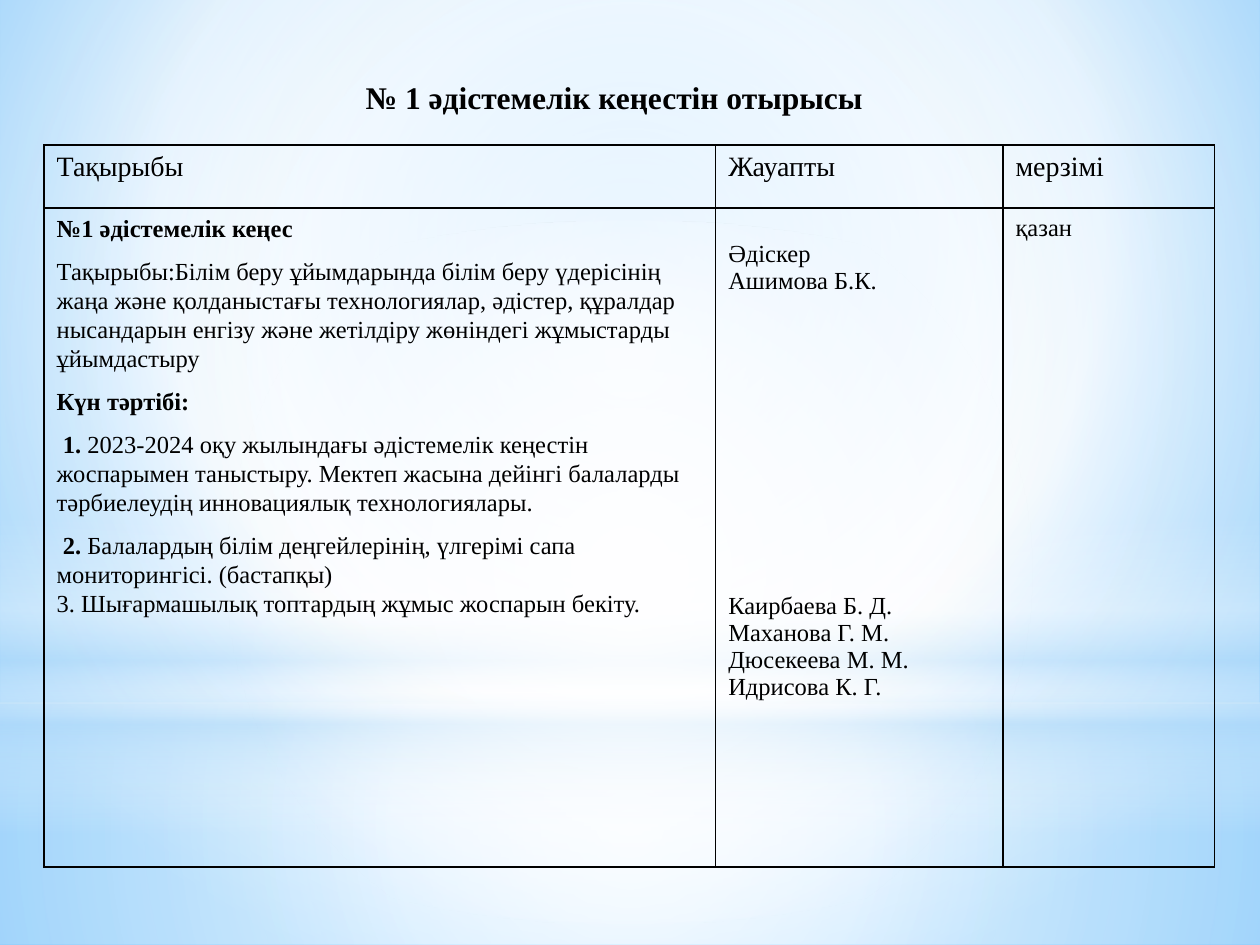
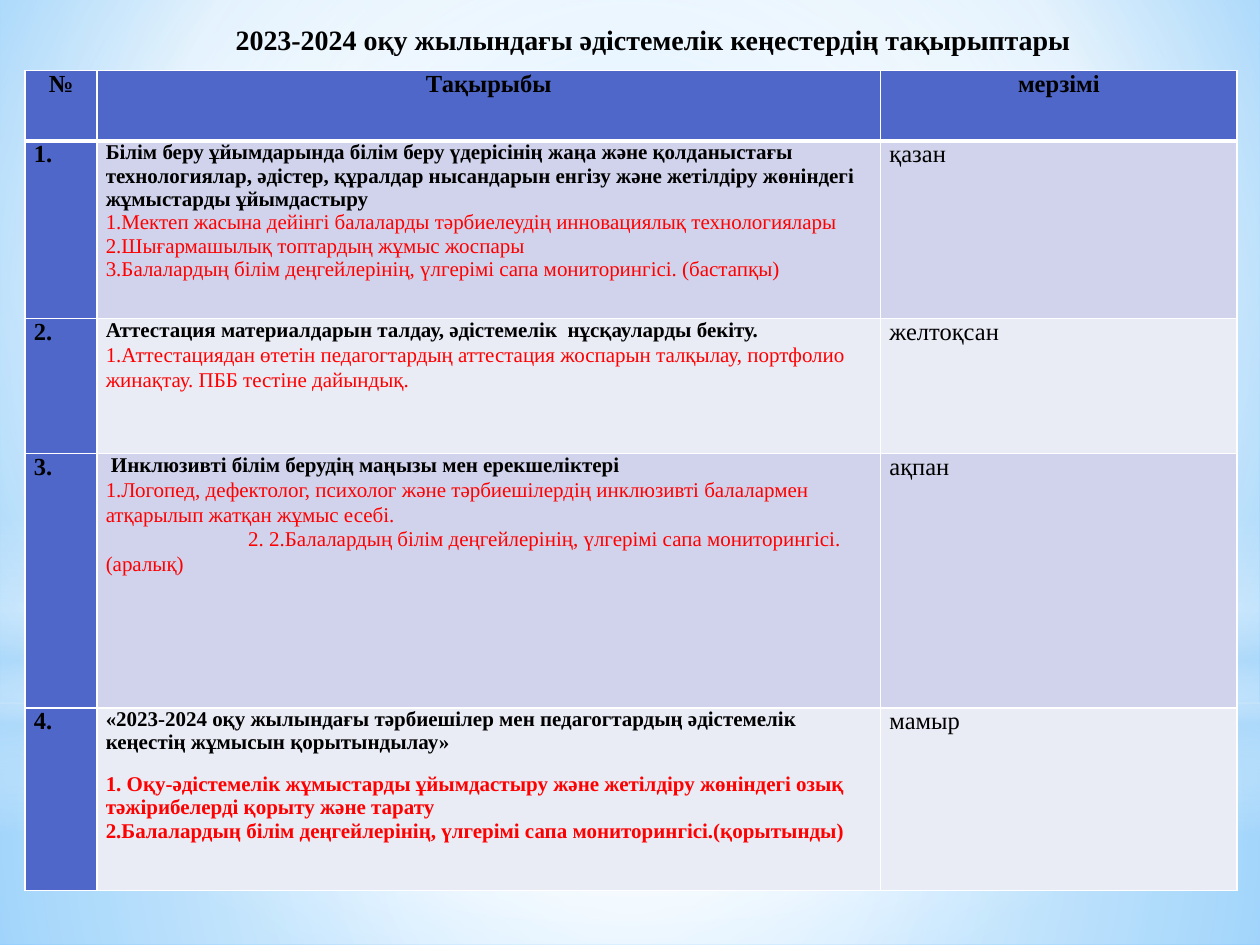
"""Build two slides on the methodical council: one session and the yearly topics."""
from dataclasses import dataclass

from lxml import etree
from pptx import Presentation
from pptx.dml.color import RGBColor
from pptx.enum import shapes, text
from pptx.oxml.ns import qn
from pptx.util import Inches, Pt

FONT = "Times New Roman"
BLACK = RGBColor(0x00, 0x00, 0x00)
WHITE = RGBColor(0xFF, 0xFF, 0xFF)
RED = RGBColor(0xFF, 0x00, 0x00)
SKY = RGBColor(0x9E, 0xD5, 0xFF)
AZURE = RGBColor(0x5B, 0xB9, 0xFF)
MIST = RGBColor(0xB4, 0xDC, 0xFA)
INDIGO = RGBColor(0x4E, 0x67, 0xC8)
BANDS = (RGBColor(0xD0, 0xD3, 0xEB), RGBColor(0xE9, 0xEB, 0xF5))

CENTER = text.PP_ALIGN.CENTER
LEFT = text.PP_ALIGN.LEFT
MIDDLE = (50, 50, 50, 50)


@dataclass
class Para:
    """Text of one paragraph with an optional bold lead, and its format."""
    words: str
    lead: str = ""
    size: float = 14
    bold: bool = False
    color: RGBColor = BLACK
    align: int = LEFT
    spacing: float = 1.0
    before: float = 0
    after: float = 0
    indent: float = 0


BACKDROP = [(0, SKY, 100), (60, WHITE, 100), (100, AZURE, 100)]
RECT, OVAL = shapes.MSO_SHAPE.RECTANGLE, shapes.MSO_SHAPE.OVAL
GLOWS = [
    (RECT, (0, 5.58, 10, 1.92), [(0, WHITE, 91), (37, WHITE, 76), (100, MIST, 79)], MIDDLE),
    (RECT, (0, 0, 10, 5.58), [(0, WHITE, 89), (48, WHITE, 62), (100, MIST, 79)], MIDDLE),
    (RECT, (0, 4.12, 10, 2.5), [(0, WHITE, 0), (29, WHITE, 30), (45, MIST, 40),
                                (55, WHITE, 26), (65, MIST, 60), (100, WHITE, 0)], None),
    (OVAL, (0, 1.75, 10, 5.58), [(0, WHITE, 100), (56, WHITE, 0)], MIDDLE),
]

SESSION_TITLE = Para("№ 1 әдістемелік кеңестін отырысы", size=18, bold=True, align=CENTER)
SESSION_HEADS = ["Тақырыбы", "Жауапты", "мерзімі"]
AGENDA = [
    Para("№1 әдістемелік кеңес", bold=True, spacing=1.07, after=8),
    Para("Тақырыбы:Білім беру ұйымдарында білім беру үдерісінің жаңа және қолданыстағы "
         "технологиялар, әдістер, құралдар нысандарын енгізу және жетілдіру жөніндегі "
         "жұмыстарды ұйымдастыру", spacing=1.07, after=8),
    Para("Күн тәртібі:", bold=True, spacing=1.07, after=8),
    Para("2023-2024 оқу жылындағы әдістемелік кеңестін жоспарымен таныстыру. Мектеп жасына "
         "дейінгі балаларды тәрбиелеудің инновациялық технологиялары.",
         lead=" 1. ", spacing=1.07, after=8),
    Para("Балалардың білім деңгейлерінің, үлгерімі сапа мониторингісі. (бастапқы)",
         lead=" 2. ", spacing=1.07),
    Para("3. Шығармашылық топтардың жұмыс жоспарын бекіту.", spacing=1.07),
]
RESPONSIBLE = [
    Para("Әдіскер"),
    Para("Ашимова Б.К."),
    Para("Каирбаева Б. Д.", before=170),
    Para("Маханова Г. М."),
    Para("Дюсекеева М. М."),
    Para("Идрисова К. Г."),
]

TOPICS_TITLE = Para("2023-2024 оқу жылындағы әдістемелік кеңестердің тақырыптары",
                    size=16, bold=True)
TOPICS_HEADS = ["№", "Тақырыбы", "мерзімі"]
TOPICS = [
    ("қазан", [
        Para("Білім беру ұйымдарында білім беру үдерісінің жаңа және қолданыстағы "
             "технологиялар, әдістер, құралдар нысандарын енгізу және жетілдіру жөніндегі "
             "жұмыстарды ұйымдастыру", size=12, bold=True),
        Para("1.Мектеп жасына дейінгі балаларды тәрбиелеудің инновациялық технологиялары",
             size=12, color=RED),
        Para("2.Шығармашылық топтардың жұмыс жоспары", size=12, color=RED),
        Para("3.Балалардың білім деңгейлерінің, үлгерімі сапа мониторингісі. (бастапқы)",
             size=12, color=RED),
    ]),
    ("желтоқсан", [
        Para("Аттестация материалдарын талдау, әдістемелік  нұсқауларды бекіту.",
             size=12, bold=True),
        Para("1.Аттестациядан өтетін педагогтардың аттестация жоспарын талқылау, портфолио "
             "жинақтау. ПББ тестіне дайындық.", size=12, color=RED, spacing=1.07, after=8),
    ]),
    ("ақпан", [
        Para(" Инклюзивті білім берудің маңызы мен ерекшеліктері", size=12, bold=True),
        Para("1.Логопед, дефектолог, психолог және тәрбиешілердің инклюзивті балалармен "
             "атқарылып жатқан жұмыс есебі.", size=12, color=RED, spacing=1.07),
        Para("2. 2.Балалардың білім деңгейлерінің, үлгерімі сапа мониторингісі. (аралық)",
             size=12, color=RED, spacing=1.07, after=8, indent=1.13),
    ]),
    ("мамыр", [
        Para("«2023-2024 оқу жылындағы тәрбиешілер мен педагогтардың әдістемелік кеңестің "
             "жұмысын қорытындылау»", size=12, bold=True, after=10.4),
        Para("1. Оқу-әдістемелік жұмыстарды ұйымдастыру және жетілдіру жөніндегі озық "
             "тәжірибелерді қорыту және тарату", size=12, bold=True, color=RED),
        Para("2.Балалардың білім деңгейлерінің, үлгерімі сапа мониторингісі.(қорытынды)",
             size=12, bold=True, color=RED),
    ]),
]


def set_gradient(fill, owner, stops, focus):
    """Give a fill its stops, spread around a focus or from top to bottom."""
    fill.gradient()
    grad = next(owner.iter(qn("a:gradFill")))
    for child in list(grad):
        grad.remove(child)
    stop_list = etree.SubElement(grad, qn("a:gsLst"))
    for position, color, opacity in stops:
        stop = etree.SubElement(stop_list, qn("a:gs"), pos=str(position * 1000))
        clr = etree.SubElement(stop, qn("a:srgbClr"), val=str(color))
        if opacity < 100:
            etree.SubElement(clr, qn("a:alpha"), val=str(opacity * 1000))
    if focus:
        around = etree.SubElement(grad, qn("a:path"), path="circle")
        sides = {side: str(share * 1000) for side, share in zip("ltrb", focus)}
        etree.SubElement(around, qn("a:fillToRect"), **sides)
    else:
        etree.SubElement(grad, qn("a:lin"), ang="5400000", scaled="0")


def decorate_master(master, slide):
    """Set the shared background and move the glow shapes to the master."""
    set_gradient(master.background.fill, master.element, BACKDROP, (20, 10, 20, 60))
    for index, (kind, box, stops, focus) in enumerate(GLOWS):
        sp = slide.shapes.add_shape(kind, *map(Inches, box))
        sp.shadow.inherit = False
        sp.line.fill.background()
        set_gradient(sp.fill, sp.element, stops, focus)
        master.shapes.element.insert(2 + index, sp.element)


def write(tf, paras):
    """Fill a text frame with paragraphs."""
    for index, para in enumerate(paras):
        p = tf.add_paragraph() if index else tf.paragraphs[0]
        p.alignment = para.align
        p.line_spacing = para.spacing
        p.space_before, p.space_after = Pt(para.before), Pt(para.after)
        if para.indent:
            p._p.get_or_add_pPr().set("indent", str(Inches(para.indent)))
        p.font.name, p.font.size = FONT, Pt(para.size)
        p.font.bold = para.bold
        p.font.color.rgb = para.color
        if para.lead:
            r = p.add_run()
            r.text, r.font.bold = para.lead, True
        p.add_run().text = para.words


def add_title(slide, para, box, wrap):
    """Place and write the title."""
    sp = slide.shapes.title
    sp.left, sp.top, sp.width, sp.height = map(Inches, box)
    tf = sp.text_frame
    tf.word_wrap, tf.auto_size = wrap, text.MSO_AUTO_SIZE.NONE
    tf.vertical_anchor = text.MSO_ANCHOR.TOP
    write(tf, [para])


def set_borders(cell, color, bottom):
    """Draw the four borders of a cell."""
    props = cell._tc.get_or_add_tcPr()
    for index, (side, width) in enumerate(zip("LRTB", (1, 1, 1, bottom))):
        ln = etree.Element(qn("a:ln" + side), w=str(Pt(width)))
        solid = etree.SubElement(ln, qn("a:solidFill"))
        etree.SubElement(solid, qn("a:srgbClr"), val=str(color))
        props.insert(index, ln)


def add_grid(slide, left, top, widths, heights, rows, border, fill_of=None, head_line=1):
    """Add a table of paragraph lists and return it."""
    frame = slide.shapes.add_table(len(heights), len(widths), Inches(left), Inches(top),
                                   Inches(sum(widths)), Inches(sum(heights)))
    table = frame.table
    table.first_row = table.horz_banding = False
    for column, width in zip(table.columns, widths):
        column.width = Inches(width)
    for r, (height, row) in enumerate(zip(heights, rows)):
        table.rows[r].height = Inches(height)
        for c, paras in enumerate(row):
            cell = table.cell(r, c)
            if fill_of:
                cell.fill.solid()
                cell.fill.fore_color.rgb = fill_of(r, c)
                cell.margin_left = cell.margin_right = Inches(0.07)
                cell.margin_top = cell.margin_bottom = 0
            else:
                cell.fill.background()
            set_borders(cell, border, 1 if r else head_line)
            write(cell.text_frame, paras)
    return table


def topic_fill(row, column):
    """Return the fill of a cell in the topics table."""
    return INDIGO if row == 0 or column == 0 else BANDS[(row - 1) % 2]


def build_session(slide):
    """Build the slide of the first session."""
    add_title(slide, SESSION_TITLE, (2.78, 0.57, 4.19, 0.4), False)
    rows = [[[Para(head, size=16)] for head in SESSION_HEADS],
            [AGENDA, RESPONSIBLE, [Para("қазан")]]]
    table = add_grid(slide, 0.35, 1.15, (5.33, 2.28, 1.68), (0.5, 5.23), rows, BLACK)
    table.cell(1, 1).margin_top = Inches(0.26)


def build_topics(slide):
    """Build the slide of the yearly topics."""
    add_title(slide, TOPICS_TITLE, (1.77, 0.13, 7.01, 0.37), True)
    rows = [[[Para(head, bold=True, align=CENTER)] for head in TOPICS_HEADS]]
    for number, (month, paras) in enumerate(TOPICS, 1):
        rows.append([[Para(f"{number}.", bold=True)], paras, [Para(month)]])
    add_grid(slide, 0.2, 0.56, (0.57, 6.22, 2.83), (0.56, 1.41, 1.07, 2.02, 1.45),
             rows, WHITE, topic_fill, head_line=3)


def main():
    """Build and save the presentation."""
    prs = Presentation()
    prs.slide_width, prs.slide_height = Inches(10), Inches(7.5)
    session, topics = (prs.slides.add_slide(prs.slide_layouts[5]) for _ in range(2))
    decorate_master(prs.slide_master, session)
    build_session(session)
    build_topics(topics)
    prs.save("out.pptx")


if __name__ == "__main__":
    main()
